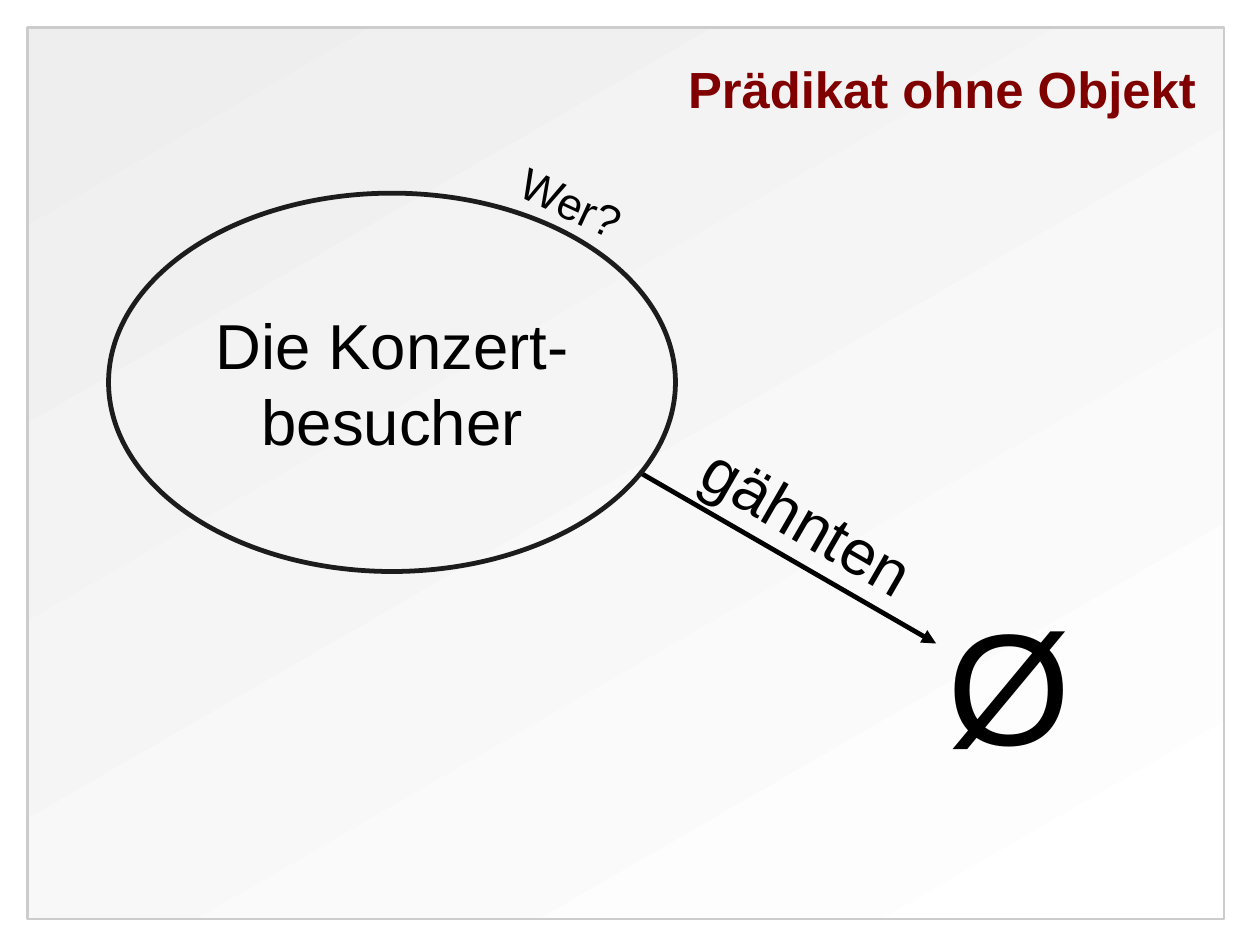
import pptx
import pptx.dml.color
import pptx.enum.shapes
import pptx.enum.text
import pptx.oxml.ns
import pptx.util
from lxml import etree

Inches = pptx.util.Inches
Pt = pptx.util.Pt
RGBColor = pptx.dml.color.RGBColor
Shape = pptx.enum.shapes.MSO_SHAPE
Align = pptx.enum.text.PP_ALIGN
Anchor = pptx.enum.text.MSO_ANCHOR

BLACK = RGBColor(0x00, 0x00, 0x00)
INK = RGBColor(0x1C, 0x1C, 0x1C)
RED = RGBColor(0x80, 0x00, 0x00)
EDGE = RGBColor(0xCC, 0xCC, 0xCC)
PALE = RGBColor(0xEE, 0xEE, 0xEE)
WHITE = RGBColor(0xFF, 0xFF, 0xFF)


def write(shape, text, size, color=BLACK, bold=False, align=Align.LEFT,
          anchor=Anchor.TOP, inset=(0.1, 0.05), wrap=True):
    """Fill a shape with text, one paragraph a line."""
    frame = shape.text_frame
    frame.word_wrap = wrap
    frame.vertical_anchor = anchor
    frame.margin_left = frame.margin_right = Inches(inset[0])
    frame.margin_top = frame.margin_bottom = Inches(inset[1])
    frame.text = text
    for para in frame.paragraphs:
        para.alignment = align
        font = para.runs[0].font
        font.name, font.size, font.bold = "Arial", Pt(size), bold
        font.color.rgb = color


def add_label(slide, box, text, size, turn=0, **style):
    label = slide.shapes.add_textbox(*map(Inches, box))
    label.rotation = turn
    write(label, text, size, **style)


def add_outline(slide, kind, box, color, width):
    shape = slide.shapes.add_shape(kind, *map(Inches, box))
    shape.shadow.inherit = False
    shape.fill.background()
    shape.line.color.rgb = color
    shape.line.width = Pt(width)
    return shape


def add_arrow(slide, start, end):
    arrow = slide.shapes.add_connector(
        pptx.enum.shapes.MSO_CONNECTOR.STRAIGHT, *map(Inches, start + end))
    arrow.line.color.rgb = BLACK
    arrow.line.width = Pt(3)
    name = pptx.oxml.ns.qn
    props = arrow._element.spPr
    etree.SubElement(props.find(name("a:ln")), name("a:tailEnd"), type="triangle")
    etree.SubElement(props, name("a:effectLst"))


def add_panel(slide, box):
    """Draw the shaded page panel with its heading."""
    left, top, width, height = box
    panel = add_outline(slide, Shape.RECTANGLE, box, EDGE, 1.5)
    panel.fill.gradient()
    panel.fill.gradient_angle = 300
    for stop, color in zip(panel.fill.gradient_stops, (PALE, WHITE)):
        stop.color.rgb = color
    add_label(slide, (left + 0.31, top + 0.21, width - 0.55, 0.65),
              "Prädikat ohne Objekt", 32, color=RED, bold=True,
              align=Align.RIGHT, anchor=Anchor.MIDDLE, inset=(0, 0))


def add_clause(slide, box):
    """Draw the subject, its verb arrow and the missing object."""
    left, top, width, height = box
    right, base = left + width, top + height
    tip = (right + 2.28, base + 0.63)
    add_arrow(slide, (right - 0.32, base - 0.87), tip)
    subject = add_outline(slide, Shape.OVAL, box, INK, 3)
    write(subject, "Die Konzert-\nbesucher", 40, align=Align.CENTER,
          anchor=Anchor.MIDDLE, inset=(0.12, 0.07), wrap=False)
    add_label(slide, (right - 1.48, top - 0.15, 1.38, 0.55), "Wer?", 28, turn=25)
    add_label(slide, (tip[0], tip[1] - 0.55, 2.05, 2.28), "Ø", 100)
    add_label(slide, (right + 0.06, base - 0.83, 2.23, 0.77), "gähnten", 40,
              turn=30, wrap=False)


def main():
    deck = pptx.Presentation()
    # The page measures 28 by 21 centimetres.
    deck.slide_width, deck.slide_height = Inches(28 / 2.54), Inches(21 / 2.54)
    slide = deck.slides.add_slide(deck.slide_layouts[6])
    add_panel(slide, (0.24, 0.24, 10.47, 7.8))
    add_clause(slide, (0.95, 1.69, 4.96, 3.31))
    deck.save("out.pptx")


if __name__ == "__main__":
    main()
